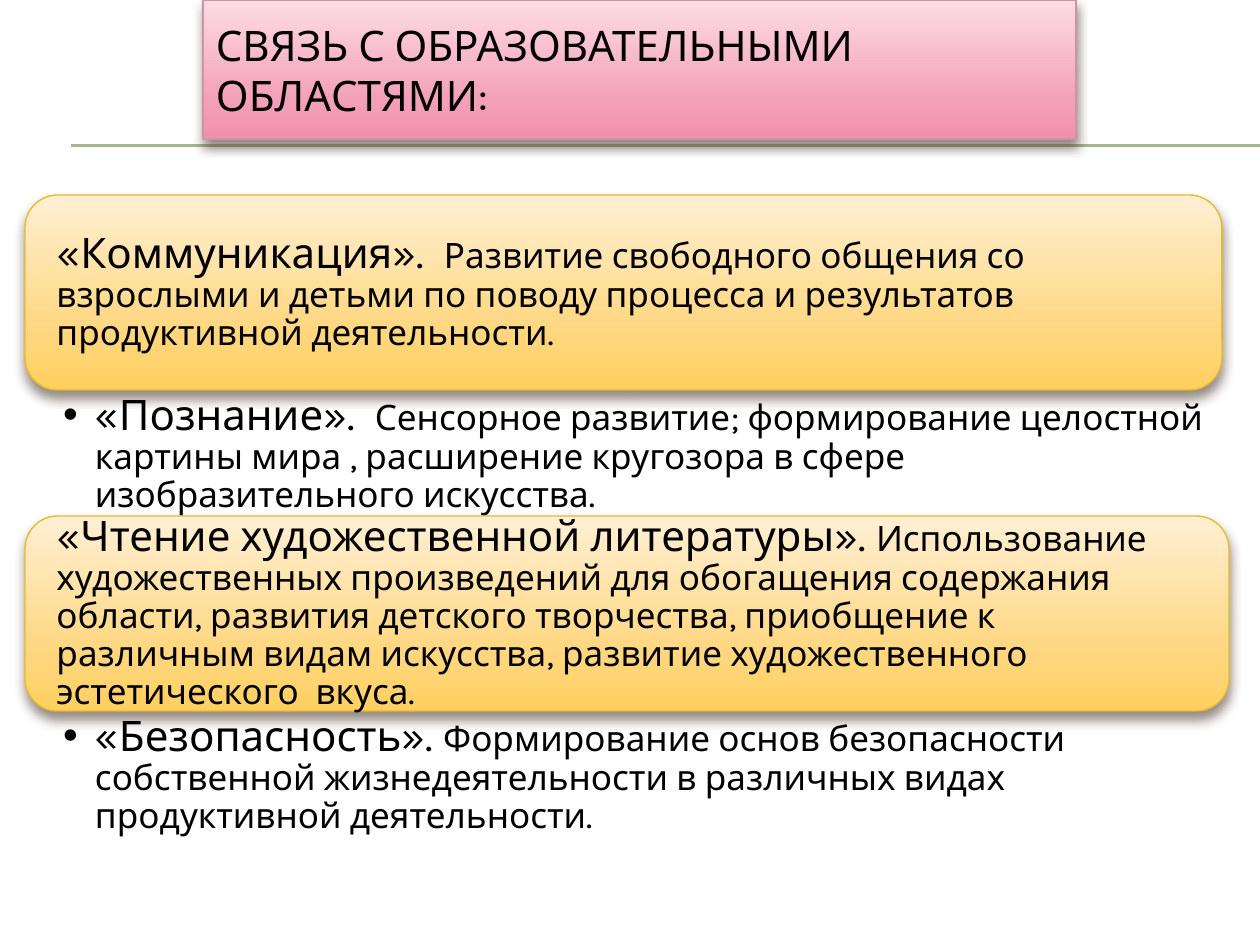
from lxml import etree
from pptx import Presentation
from pptx.dml.color import RGBColor
from pptx.enum.shapes import MSO_CONNECTOR, MSO_SHAPE
from pptx.enum.text import MSO_ANCHOR, MSO_AUTO_SIZE, PP_ALIGN
from pptx.oxml.ns import qn
from pptx.util import Emu, Pt

STRAIGHT = MSO_CONNECTOR.STRAIGHT
ROUNDED = MSO_SHAPE.ROUNDED_RECTANGLE
TOP, MIDDLE = MSO_ANCHOR.TOP, MSO_ANCHOR.MIDDLE
LEFT = PP_ALIGN.LEFT
NO_FIT = MSO_AUTO_SIZE.NONE

SCALE = 914400 / 126
FONT = "Karla"
COLORS = {
    "text": "000000",
    "rule": "A5B592",
    "title_line": "D092A7",
    "card_line": "E7BC29",
    "shadow": "4E3B30",
}
GRADIENTS = {
    "title": {0: "FCDCE5", 72: "F3A0BA", 100: "F28EAF"},
    "card": {0: "FFEFD4", 72: "FFD67D", 100: "FFD060"},
}


def px(length):
    return Emu(round(length * SCALE))


def add_node(parent, tag, **attributes):
    values = {name: str(value) for name, value in attributes.items()}
    return etree.SubElement(parent, qn(tag), values)


def write_text(frame, spans, anchor, insets, spacing=1.0):
    frame.word_wrap = True
    frame.auto_size = NO_FIT
    frame.vertical_anchor = anchor
    (frame.margin_left, frame.margin_top,
     frame.margin_right, frame.margin_bottom) = map(px, insets)
    para = frame.paragraphs[0]
    para.alignment = LEFT
    para.line_spacing = spacing
    para.space_before = Pt(0)
    for text, size in spans:
        span = para.add_run()
        span.text = text
        span.font.name = FONT
        span.font.size = Pt(size)
        span.font.color.rgb = RGBColor.from_string(COLORS["text"])
    return para


class SlideBuilder:
    def __init__(self, deck):
        self.page = deck.slides.add_slide(deck.slide_layouts[3])

    def place(self, index, left, top, width, height):
        box = self.page.placeholders[index]
        box.left, box.top = px(left), px(top)
        box.width, box.height = px(width), px(height)
        self.page.shapes.element.append(box.element)
        return box

    def decorate(self, box, gradient, line):
        properties = box.element.spPr
        fill = add_node(properties, "a:gradFill", rotWithShape=1)
        stops = add_node(fill, "a:gsLst")
        for position, color in GRADIENTS[gradient].items():
            stop = add_node(stops, "a:gs", pos=position * 1000)
            add_node(stop, "a:srgbClr", val=color)
        add_node(fill, "a:lin", ang=5400000, scaled=0)
        box.line.color.rgb = RGBColor.from_string(COLORS[line])
        box.line.width = Pt(0.79)
        box.shadow.inherit = False
        shadow = add_node(properties.find(qn("a:effectLst")), "a:outerShdw",
                          blurRad=Pt(6), dist=Pt(4), dir=5400000, rotWithShape=0)
        color = add_node(shadow, "a:srgbClr", val=COLORS["shadow"])
        add_node(color, "a:alpha", val=60000)

    def rule(self, left, right, top):
        line = self.page.shapes.add_connector(
            STRAIGHT, px(left), px(top), px(right), px(top))
        line.line.color.rgb = RGBColor.from_string(COLORS["rule"])
        line.line.width = Pt(0.75)
        add_node(line.element.spPr, "a:effectLst")

    def title(self, text, left, top, width, height):
        box = self.place(0, left, top, width, height)
        self.decorate(box, "title", "title_line")
        write_text(box.text_frame, [(text, 24)], MIDDLE, (13, 6, 13, 6))

    def card(self, heading, text, left, top, width, height):
        box = self.page.shapes.add_shape(
            ROUNDED, px(left), px(top), px(width), px(height))
        self.decorate(box, "card", "card_line")
        write_text(box.text_frame, [(heading, 24), (text, 20)],
                   MIDDLE, (22, 22, 22, 22), 0.9)

    def bullet(self, index, heading, text, left, top, width, height):
        box = self.place(index, left, top, width, height)
        para = write_text(box.text_frame, [(heading, 24), (text, 20)],
                          TOP, (38, 4, 24, 4), 0.9)
        properties = para._p.get_or_add_pPr()
        properties.set("marL", str(px(32)))
        properties.set("indent", str(px(-32)))
        add_node(properties, "a:buChar", char="•")


def main():
    deck = Presentation()
    deck.slide_width, deck.slide_height = px(1260), px(945)
    slide = SlideBuilder(deck)
    for top in (145, 146):
        slide.rule(71, 1260, top)
    slide.title("СВЯЗЬ С ОБРАЗОВАТЕЛЬНЫМИ ОБЛАСТЯМИ:", 203, 0, 873, 139)
    slide.card(
        "«Коммуникация».  ",
        "Развитие свободного общения со взрослыми и детьми по поводу процесса "
        "и результатов продуктивной деятельности.",
        25, 195, 1197, 195)
    slide.bullet(
        1, "«Познание».  ",
        "Сенсорное развитие; формирование целостной картины мира , расширение "
        "кругозора в сфере изобразительного искусства.",
        25, 390, 1204, 126)
    slide.card(
        "«Чтение художественной литературы». ",
        "Использование художественных произведений для обогащения содержания "
        "области, развития детского творчества, приобщение к различным видам "
        "искусства, развитие художественного эстетического  вкуса.",
        25, 516, 1204, 195)
    slide.bullet(
        2, "«Безопасность». ",
        "Формирование основ безопасности собственной жизнедеятельности в "
        "различных видах продуктивной деятельности.",
        25, 711, 1204, 145)
    deck.save("out.pptx")


if __name__ == "__main__":
    main()
